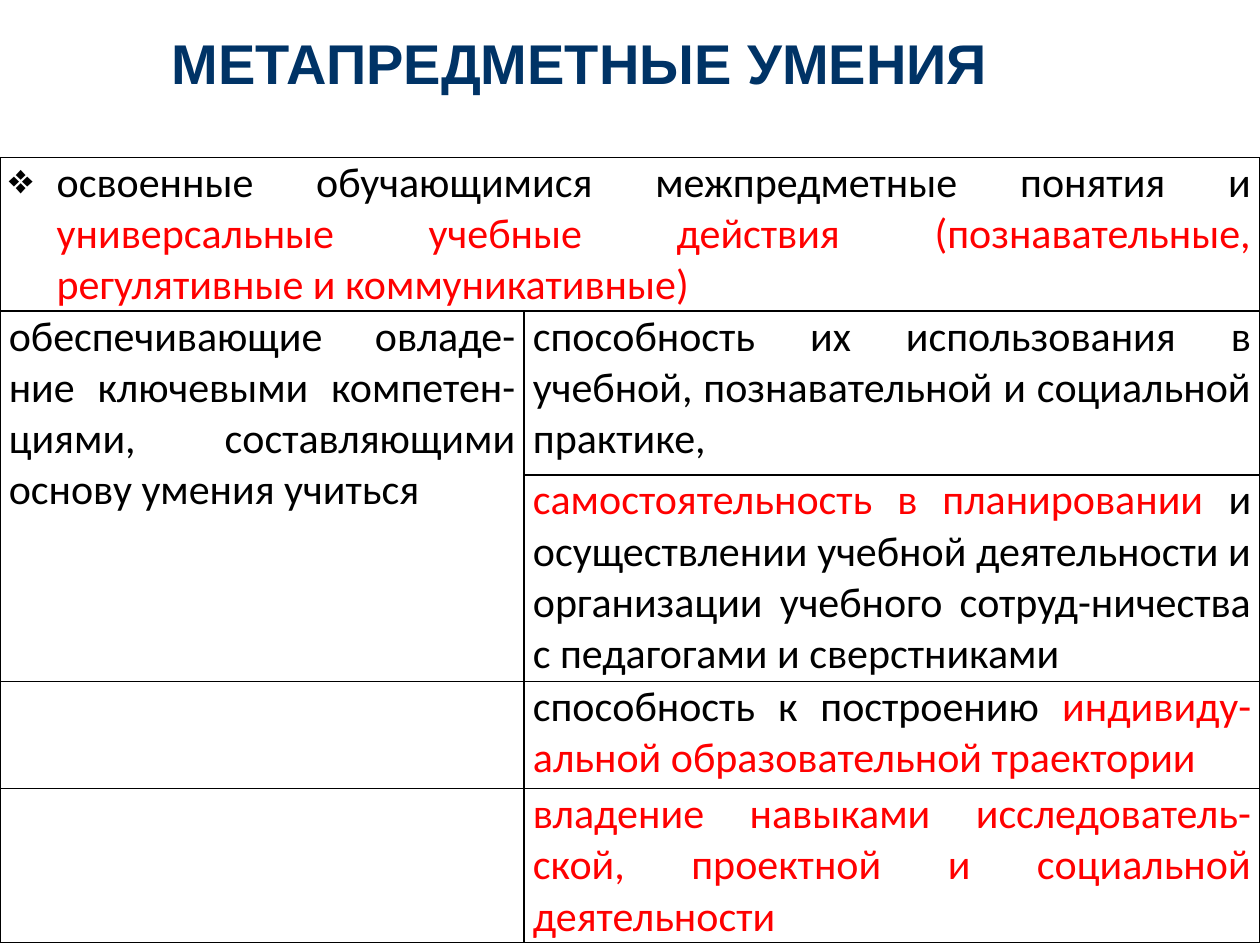
from dataclasses import dataclass

from lxml import etree
from pptx import Presentation
from pptx import util as u
from pptx.dml.color import RGBColor
from pptx.enum import text
from pptx.oxml.ns import qn


@dataclass(frozen=True)
class Theme:
    navy: str = "003366"
    black: str = "000000"
    red: str = "FF0000"
    title_font: str = "Arial"
    body_font: str = "Calibri"
    title_size: int = 32
    body_size: int = 24
    border_width: int = 1
    cell_inset: float = 0.07
    bullet_indent: float = 0.38


THEME = Theme()


def add_run(paragraph, content, *, font, size, color, bold=False):
    run = paragraph.add_run()
    run.text = content
    run.font.name = font
    run.font.size = u.Pt(size)
    run.font.bold = bold
    run.font.color.rgb = RGBColor.from_string(color)


class SlideBuilder:
    def __init__(self, slide, theme):
        self.slide = slide
        self.theme = theme

    def title(self, content, left, top, width, height):
        box = self.slide.shapes.add_textbox(*map(u.Inches, (left, top, width, height)))
        frame = box.text_frame
        frame.word_wrap = True
        frame.vertical_anchor = text.MSO_ANCHOR.MIDDLE
        paragraph = frame.paragraphs[0]
        paragraph.alignment = text.PP_ALIGN.RIGHT
        add_run(paragraph, content, font=self.theme.title_font,
                size=self.theme.title_size, color=self.theme.navy, bold=True)

    def table(self, left, top, columns, rows):
        lengths = (left, top, sum(columns), sum(rows))
        table = self.slide.shapes.add_table(
            len(rows), len(columns), *map(u.Inches, lengths)).table
        table.first_row = table.horz_banding = False
        for column, width in zip(table.columns, columns):
            column.width = u.Inches(width)
        for row, height in zip(table.rows, rows):
            row.height = u.Inches(height)
        for cell in table.iter_cells():
            self.cell_format(cell)
        return table

    def cell_format(self, cell):
        cell.margin_left = cell.margin_right = u.Inches(self.theme.cell_inset)
        cell.margin_top = cell.margin_bottom = 0
        properties = cell._tc.get_or_add_tcPr()
        for side in ("lnL", "lnR", "lnT", "lnB"):
            line = etree.SubElement(properties, qn(f"a:{side}"),
                                    w=str(u.Pt(self.theme.border_width)))
            fill = etree.SubElement(line, qn("a:solidFill"))
            etree.SubElement(fill, qn("a:srgbClr"), val=self.theme.black)
        cell.fill.background()

    def cell_text(self, cell, parts, bullet=None):
        paragraph = cell.text_frame.paragraphs[0]
        paragraph.alignment = text.PP_ALIGN.JUSTIFY
        if bullet:
            properties = paragraph._p.get_or_add_pPr()
            indent = u.Inches(self.theme.bullet_indent)
            properties.set("marL", str(indent))
            properties.set("indent", str(-indent))
            etree.SubElement(properties, qn("a:buChar"), char=bullet)
        for content, color in parts:
            add_run(paragraph, content, font=self.theme.body_font,
                    size=self.theme.body_size, color=color)


def main():
    presentation = Presentation()
    presentation.slide_width = u.Inches(10)
    presentation.slide_height = u.Inches(7.5)
    slide = presentation.slides.add_slide(presentation.slide_layouts[6])
    builder = SlideBuilder(slide, THEME)

    # Heading
    builder.title("МЕТАПРЕДМЕТНЫЕ УМЕНИЯ", 0.94, 0.23, 7, 0.53)

    # Table grid
    skills = builder.table(0, 1.25, columns=(4.16, 5.84),
                           rows=(1.22, 1.3, 1.64, 0.85, 1.22))
    skills.cell(0, 0).merge(skills.cell(0, 1))
    skills.cell(1, 0).merge(skills.cell(2, 0))

    # Definition across the top
    builder.cell_text(skills.cell(0, 0), [
        ("освоенные обучающимися межпредметные понятия и ", THEME.black),
        ("универсальные учебные действия (познавательные, "
         "регулятивные и коммуникативные)", THEME.red),
    ], bullet="❖")

    # Key competences on the left
    builder.cell_text(skills.cell(1, 0), [
        ("обеспечивающие овладе-ние ключевыми компетен-циями, "
         "составляющими основу умения учиться", THEME.black),
    ])

    # Abilities on the right
    abilities = [
        [("способность их использования в учебной, познавательной "
          "и социальной практике,", THEME.black)],
        [("самостоятельность в планировании ", THEME.red),
         ("и осуществлении учебной деятельности и организации учебного "
          "сотруд-ничества с педагогами и сверстниками", THEME.black)],
        [("способность к построению ", THEME.black),
         ("индивиду-альной образовательной траектории", THEME.red)],
        [("владение навыками исследователь-ской, проектной "
          "и социальной деятельности", THEME.red)],
    ]
    for row, parts in enumerate(abilities, start=1):
        builder.cell_text(skills.cell(row, 1), parts)

    presentation.save("out.pptx")


if __name__ == "__main__":
    main()
